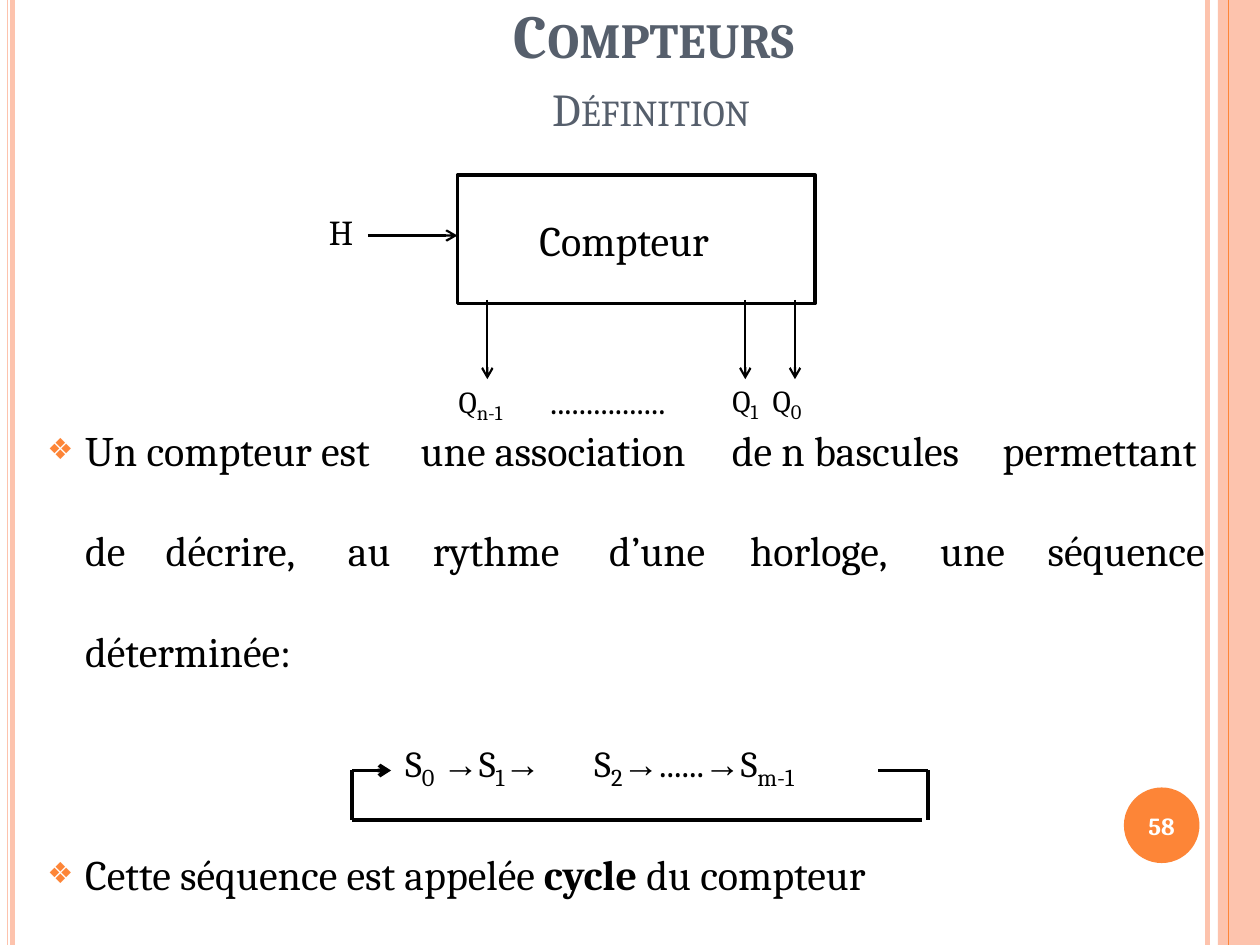
from dataclasses import dataclass

from lxml.etree import SubElement
from pptx import Presentation
from pptx.dml.color import RGBColor
from pptx.enum.shapes import MSO_CONNECTOR, MSO_SHAPE
from pptx.enum.text import MSO_ANCHOR, MSO_AUTO_SIZE, PP_ALIGN
from pptx.oxml.ns import qn
from pptx.util import Pt

COLORS = {"peach": "FDC3AD", "orange": "FD8537", "slate": "565F6C",
          "black": "000000", "white": "FFFFFF"}


@dataclass(frozen=True)
class Span:
    text: str
    size: float = 24
    font: str = "Cambria"
    color: str = "black"
    bold: bool = False
    baseline: int = 0


@dataclass(frozen=True)
class Label:
    left: float
    top: float
    width: float
    spans: tuple
    leading: float = 25.9
    tabs: tuple = ()


@dataclass(frozen=True)
class Stroke:
    start: tuple
    end: tuple
    width: float
    color: str = "black"
    arrow: bool = False


def rgb(name: str) -> RGBColor:
    return RGBColor.from_string(COLORS[name])


def add_spans(para, spans: tuple) -> None:
    for span in spans:
        run = para.add_run()
        run.text = span.text
        run.font.size = Pt(span.size)
        run.font.name = span.font
        run.font.bold = span.bold
        run.font.color.rgb = rgb(span.color)
        if span.baseline:
            run.font._element.set("baseline", str(span.baseline * 1000))


def prepare_frame(box, wrap: bool = True):
    frame = box.text_frame
    frame.word_wrap = wrap
    frame.auto_size = MSO_AUTO_SIZE.NONE
    frame.vertical_anchor = MSO_ANCHOR.TOP
    frame.margin_left = frame.margin_top = 0
    frame.margin_right = frame.margin_bottom = 0
    return frame


def place(box, left: float, top: float, width: float, height: float) -> None:
    box.left, box.top, box.width, box.height = map(Pt, (left, top, width, height))


def add_label(page, label: Label) -> None:
    box = page.shapes.add_textbox(Pt(label.left), Pt(label.top),
                                  Pt(label.width), Pt(label.leading))
    para = prepare_frame(box, wrap=bool(label.tabs)).paragraphs[0]
    if label.tabs:
        tab_list = SubElement(para._p.get_or_add_pPr(), qn("a:tabLst"))
        for stop in label.tabs:
            SubElement(tab_list, qn("a:tab"), pos=str(Pt(stop)), algn="l")
    para.line_spacing = Pt(label.leading)
    add_spans(para, label.spans)


def add_stroke(page, stroke: Stroke) -> None:
    line = page.shapes.add_connector(
        MSO_CONNECTOR.STRAIGHT, *map(Pt, stroke.start + stroke.end))
    line.line.width = Pt(stroke.width)
    line.line.color.rgb = rgb(stroke.color)
    if stroke.arrow:
        SubElement(line.line._get_or_add_ln(), qn("a:tailEnd"),
                   type="arrow", w="med", len="med")
    SubElement(line._element.spPr, qn("a:effectLst"))


def add_filled(page, kind, left: float, top: float, width: float, height: float, color: str):
    shape = page.shapes.add_shape(kind, *map(Pt, (left, top, width, height)))
    shape.shadow.inherit = False
    shape.fill.solid()
    shape.fill.fore_color.rgb = rgb(color)
    shape.line.fill.background()
    return shape


def draw_side_bands(page) -> None:
    for x, width in ((689.9, 3), (7.2, 2.8), (4.3, 1)):
        add_stroke(page, Stroke((x, 0), (x, 540), width, "peach"))
    add_filled(page, MSO_SHAPE.RECTANGLE, 696, 0, 24, 540, "peach")
    add_stroke(page, Stroke((702, 0), (702, 540), 0.75, "orange"))


def draw_page_number(page) -> None:
    badge = add_filled(page, MSO_SHAPE.OVAL, 642.24, 450, 43.2, 43.2, "orange")
    frame = prepare_frame(badge)
    frame.vertical_anchor = MSO_ANCHOR.MIDDLE
    frame.paragraphs[0].alignment = PP_ALIGN.CENTER
    add_spans(frame.paragraphs[0], (Span("58", 14, color="white", bold=True),))


def draw_counter(page) -> None:
    block = add_filled(page, MSO_SHAPE.RECTANGLE, 261.4, 100.1, 204.4, 73.4, "white")
    block.fill.background()
    block.line.color.rgb = rgb("black")
    block.line.width = Pt(2)
    frame = prepare_frame(block)
    frame.margin_left, frame.margin_top = Pt(46.8), Pt(22.4)
    frame.paragraphs[0].alignment = PP_ALIGN.LEFT
    add_spans(frame.paragraphs[0], (Span("Compteur"),))
    add_stroke(page, Stroke((210.2, 134.6), (261.4, 134.6), 1.25, arrow=True))
    for x in (278.5, 425.9, 454.3):
        add_stroke(page, Stroke((x, 171.4), (x, 216.7), 1.25, arrow=True))


def draw_cycle_loop(page) -> None:
    left, right, top, bottom = 201.2, 530.3, 440.3, 468.4
    legs = (((501.8, top), (right, top)), ((right, top), (right, bottom)),
            ((left, bottom), (527, bottom)), ((left, top), (left, bottom)))
    for start, end in legs:
        add_stroke(page, Stroke(start, end, 2.2))
    add_stroke(page, Stroke((left, top), (223.5, top), 2.2, arrow=True))


def fill_title(page) -> None:
    title = page.shapes.title
    place(title, 268.6, 3.2, 210.2, 78)
    frame = prepare_frame(title)
    lines = (
        (37.2, 0, (Span("C", 35, color="slate", bold=True),
                   Span("OMPTEURS", 28, color="slate", bold=True))),
        (36, 4.2, (Span("D", 45, color="slate", baseline=-2),
                   Span("ÉFINITION", 36, color="slate", baseline=-2))),
    )
    for index, (leading, before, spans) in enumerate(lines):
        para = frame.paragraphs[0] if index == 0 else frame.add_paragraph()
        para.alignment = PP_ALIGN.CENTER
        para.line_spacing = Pt(leading)
        para.space_before = Pt(before)
        add_spans(para, spans)
    frame.paragraphs[1]._p.get_or_add_pPr().set("marR", str(Pt(3)))


def fill_body(page) -> None:
    body = page.placeholders[1]
    place(body, 27, 245.2, 540, 268)
    frame = prepare_frame(body)
    items = (
        (0, (Span("Un compteur est"),)),
        (216.4, (Span("Cette séquence est appelée "), Span("cycle ", bold=True),
                 Span("du compteur"))),
    )
    for index, (before, spans) in enumerate(items):
        para = frame.paragraphs[0] if index == 0 else frame.add_paragraph()
        properties = para._p.get_or_add_pPr()
        properties.set("marL", str(Pt(21.6)))
        properties.set("indent", str(-Pt(21.6)))
        bullet_color = SubElement(properties, qn("a:buClr"))
        SubElement(bullet_color, qn("a:srgbClr"), val=COLORS["orange"])
        SubElement(properties, qn("a:buSzPct"), val="69000")
        SubElement(properties, qn("a:buFont"), typeface="Arial")
        SubElement(properties, qn("a:buChar"), char="❖")
        para.alignment = PP_ALIGN.LEFT
        para.line_spacing = Pt(25.9)
        para.space_before = Pt(before)
        add_spans(para, spans)


def output(index: str) -> tuple:
    return Span("Q", 30, baseline=8), Span(index, 20.2, baseline=-8)


def state(index: str) -> tuple:
    return Span("S", 36, baseline=8), Span(index, 24, baseline=-9)


def main() -> None:
    deck = Presentation()
    deck.slide_width, deck.slide_height = Pt(720), Pt(540)
    page = deck.slides.add_slide(deck.slide_layouts[1])
    draw_side_bands(page)
    draw_page_number(page)
    draw_counter(page)
    draw_cycle_loop(page)
    fill_title(page)
    fill_body(page)
    arrow = Span("→", 36, "Arial", baseline=9)
    gap = Span(" ", 36, baseline=8)
    labels = (
        Label(188, 122.4, 21, (Span("H", 20),), 21.8),
        Label(262, 219.5, 40, output("n-1"), 25.1),
        Label(314.3, 218.9, 93, (Span("." * 16, 20),), 21.8),
        Label(418.5, 219, 22, output("1"), 25.4),
        Label(441.5, 219, 22, output("0"), 25.4),
        Label(240.4, 245.2, 449, (Span("une association\tde n bascules\tpermettant"),),
              tabs=(177.8, 332.6)),
        Label(48.6, 302.8, 650,
              (Span("de\tdécrire,\tau\trythme\td’une\thorloge,\tune\tséquence"),),
              tabs=(46.1, 150.2, 198.7, 299.5, 380, 488.6, 550)),
        Label(48.6, 360.4, 137, (Span("déterminée:"),)),
        Label(231.6, 424.5, 107, state("0") + (gap, arrow) + state("1") + (arrow,), 30.1),
        Label(339.7, 424.5, 160, state("2") + (arrow, Span("......", 36, baseline=8), arrow)
              + state("m-1"), 30.1),
    )
    for label in labels:
        add_label(page, label)
    deck.save("out.pptx")


if __name__ == "__main__":
    main()
